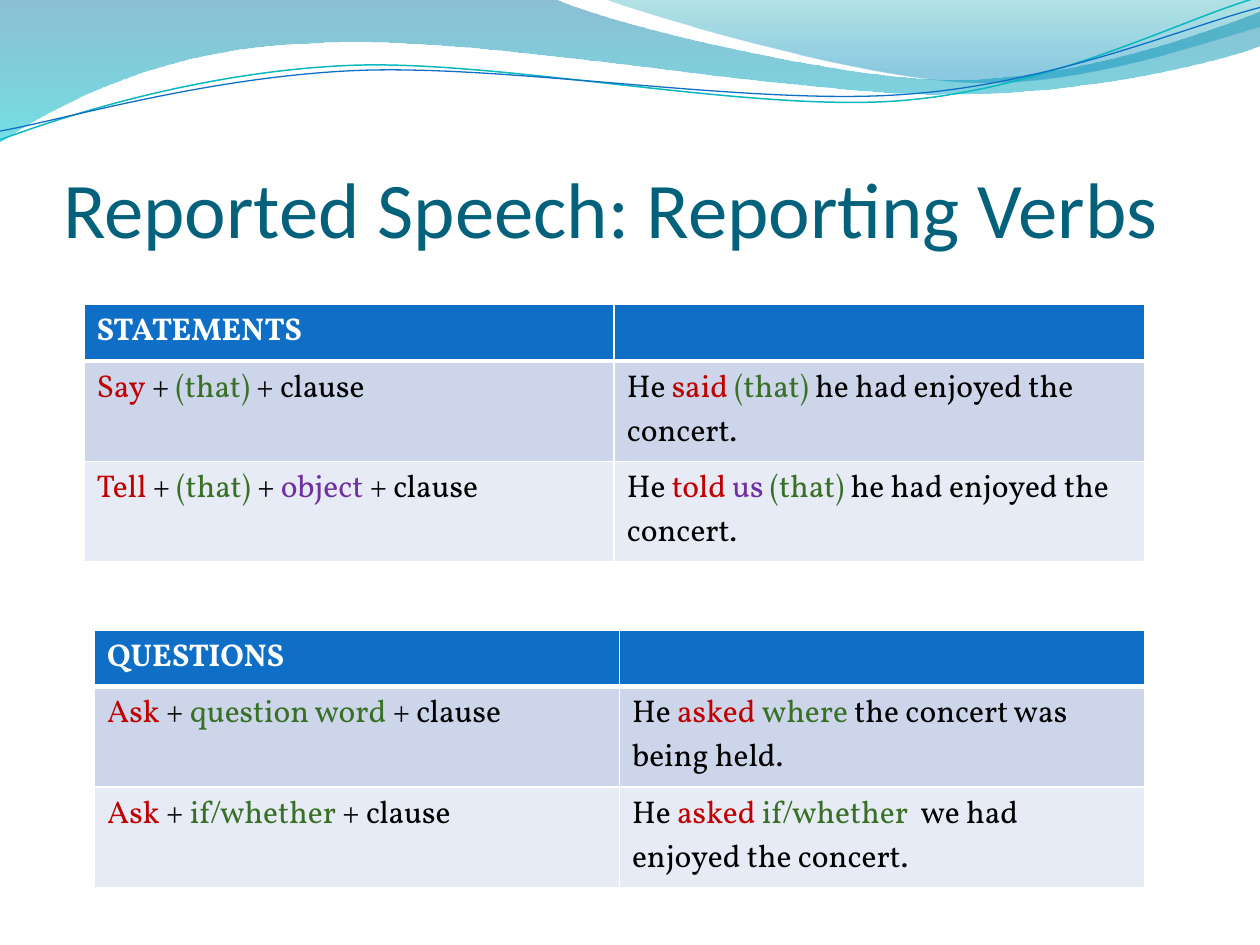
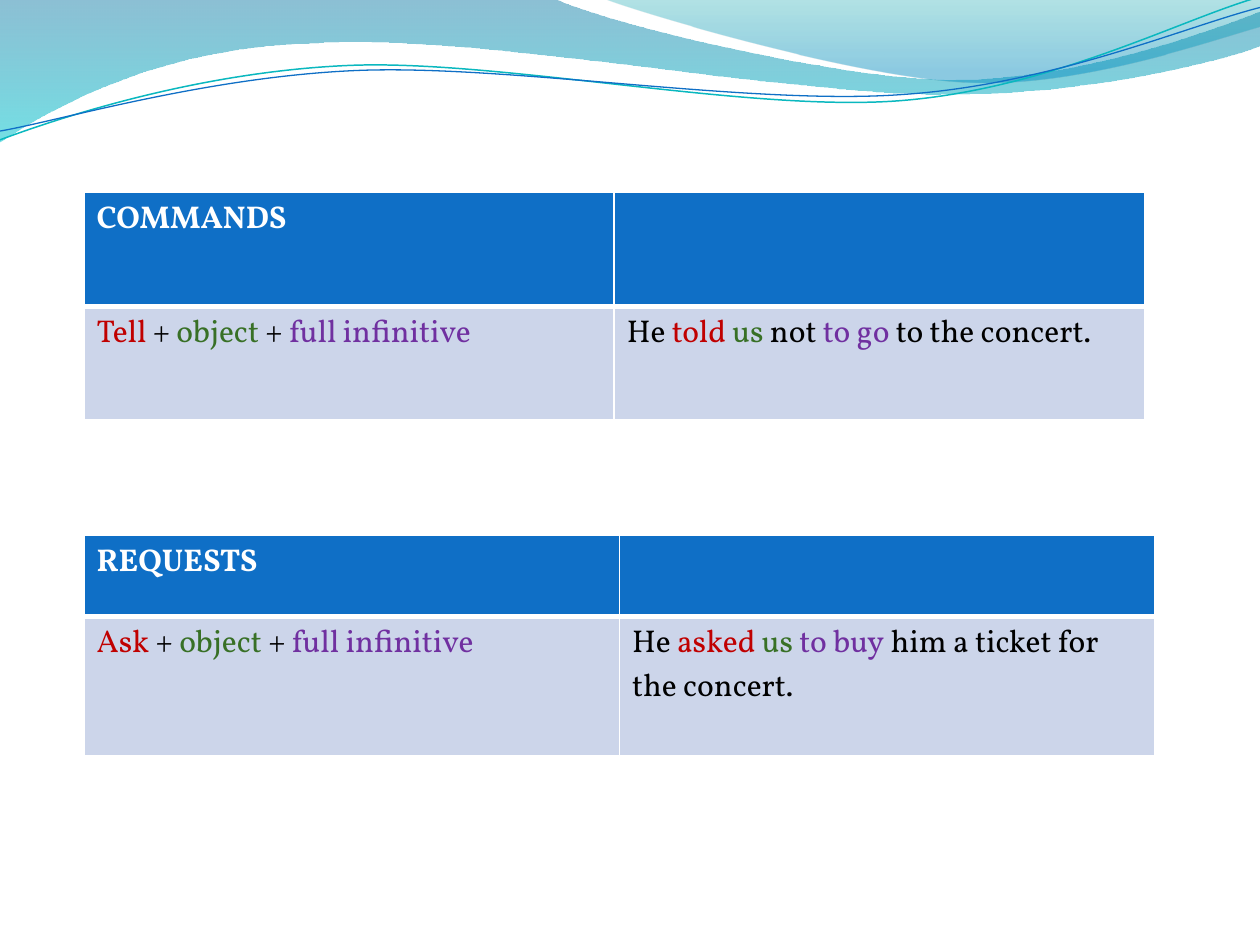
from dataclasses import dataclass
from math import cos, radians, sin

from pptx import Presentation
from pptx.dml.color import RGBColor as RGB
from pptx.enum.text import MSO_ANCHOR as Anchor, MSO_AUTO_SIZE as AutoSize, PP_ALIGN as Align
from pptx.oxml.ns import qn
from pptx.util import Pt
from lxml.etree import SubElement


@dataclass(frozen=True)
class Theme:
    title_font: str = "Calibri"
    body_font: str = "Vollkorn"
    title_size: float = 45
    body_size: float = 18
    title: str = "04617B"
    header: str = "0F6FC6"
    bands: tuple = ("CCD5EA", "E7EBF5")
    border: str = "FFFFFF"
    heading: str = "FFFFFF"
    plain: str = "000000"
    verb: str = "C00000"
    green: str = "387026"
    purple: str = "7030A0"


THEME = Theme()

# Wave outlines in points: a pair is a line end, three pairs are a Bezier curve
SWEEP = [(0, 0), (316.8, -0.7),
         ((342.7, 12.2), (478.1, 45.4), (545.8, 45.4)),
         ((614.2, 45.4), (689.8, 18.7), (720, 6.5)),
         (720.7, 25.9),
         ((707.8, 31.7), (626.4, 54.7), (537.1, 54)),
         ((447.8, 54), (275, 20.2), (185, 24.5)),
         ((92.9, 25.9), (33.1, 59.8), (-0.7, 81.4))]
VEIL = [(344.9, -0.7),
        ((366.5, 7.9), (491, 44.6), (553.7, 46.8)),
        ((616.3, 49.7), (691.9, 23), (720, 15.1)),
        (720, 0)]
TEAL_STRAND = [(0, 79.9),
               ((34.6, 67), (113.8, 41), (199.4, 37.4)),
               ((284.4, 33.8), (427, 64.1), (513.4, 57.6)),
               ((599.8, 51.1), (675.4, 10.8), (718.6, -1.4))]
BLUE_STRAND = [(0, 74.9),
               ((33.8, 69.1), (118.1, 43.9), (203.8, 40.3)),
               ((290.2, 36.7), (429.8, 60.5), (516.2, 54)),
               ((601.9, 48.2), (677.5, 15.1), (720, 4.3))]
STRAND_TILT = -2.7
STRAND_CENTRE = (359.5, 42)

# Gradient stops: position, colour, opacity in percent
WAVES = [(SWEEP, [(0, "0074A1", 45), (1, "00C6CF", 55)]),
         (VEIL, [(0, "00A1A9", 30), (0.8, "008BBF", 45)])]
STRANDS = [(TEAL_STRAND, "0AB8BF", 0.85), (BLUE_STRAND, "0F6FC6", 0.75)]

# Grammar rows: each cell is a list of (colour role, text)
STATEMENTS = [
    ([("verb", "Say"), ("plain", " + "), ("green", "(that) "), ("plain", "+ clause")],
     [("plain", "He "), ("verb", "said "), ("green", "(that) "),
      ("plain", "he had enjoyed the concert.")]),
    ([("verb", "Tell"), ("plain", " + "), ("green", "(that) "), ("plain", "+ "),
      ("purple", "object"), ("plain", " + clause")],
     [("plain", "He "), ("verb", "told "), ("purple", "us "), ("green", "(that) "),
      ("plain", "he had enjoyed the concert.")]),
]
QUESTIONS = [
    ([("verb", "Ask"), ("plain", " + "), ("green", "question word "), ("plain", "+ clause")],
     [("plain", "He "), ("verb", "asked "), ("green", "where "),
      ("plain", "the concert was being held.")]),
    ([("verb", "Ask"), ("plain", " + "), ("green", "if/whether"), ("plain", " + clause")],
     [("plain", "He "), ("verb", "asked "), ("green", "if/whether  "),
      ("plain", "we had enjoyed the concert.")]),
]
COMMANDS = [
    ([("verb", "Tell "), ("plain", "+ "), ("green", "object"), ("plain", " + "),
      ("purple", "full infinitive")],
     [("plain", "He "), ("verb", "told "), ("green", "us"), ("plain", " not "),
      ("purple", "to go "), ("plain", "to the concert.")]),
]
REQUESTS = [
    ([("verb", "Ask"), ("plain", " + "), ("green", "object"), ("plain", " + "),
      ("purple", "full infinitive")],
     [("plain", "He "), ("verb", "asked "), ("green", "us "), ("purple", "to buy"),
      ("plain", " him a ticket for the concert.")]),
]


def apply(target, formats):
    for name, value in formats.items():
        setattr(target, name, value)


def style_font(font, name, size, color, bold=False):
    apply(font, {"name": name, "size": Pt(size), "bold": bold})
    font.color.rgb = RGB.from_string(color)


# Wave backdrop
def turn(point, degrees, centre):
    (x, y), (cx, cy), angle = point, centre, radians(degrees)
    dx, dy = x - cx, y - cy
    return cx + dx * cos(angle) - dy * sin(angle), cy + dx * sin(angle) + dy * cos(angle)


def draw_outline(slide, outline, close, tilt=0, centre=(0, 0)):
    parts = [part if isinstance(part[0], tuple) else (part,) for part in outline]
    points = [turn(point, -tilt, centre) for part in parts for point in part]
    start, *rest = [(Pt(x), Pt(y)) for x, y in points]
    builder = slide.shapes.build_freeform(*start)
    builder.add_line_segments(rest, close=close)
    shape = builder.convert_to_shape()
    shape.shadow.inherit = False
    shape.rotation = tilt
    # Join each run of three segments that belongs to a curve
    segments = iter(list(shape.element.iter(qn("a:lnTo"))))
    for part in parts[1:]:
        first, *others = [next(segments) for _ in part]
        if others:
            first.tag = qn("a:cubicBezTo")
        for segment in others:
            first.append(segment[0])
            segment.getparent().remove(segment)
    return shape


def draw_wave(slide, outline, stops):
    wave = draw_outline(slide, outline, True)
    wave.line.fill.background()
    wave.fill.gradient()
    wave.fill.gradient_angle = 270
    for stop, (position, color, _) in zip(wave.fill.gradient_stops, stops):
        stop.position = position
        stop.color.rgb = RGB.from_string(color)
    for node, (_, _, opacity) in zip(wave.element.iter(qn("a:srgbClr")), stops):
        SubElement(node, qn("a:alpha"), val=str(opacity * 1000))
    return wave


def draw_strand(slide, outline, color, weight):
    strand = draw_outline(slide, outline, False, STRAND_TILT, STRAND_CENTRE)
    strand.fill.background()
    strand.line.color.rgb = RGB.from_string(color)
    strand.line.width = Pt(weight)
    return strand


def add_backdrop(prs, slide):
    """Draw the waves once and move them to the master, behind its placeholders."""
    parts = [draw_wave(slide, *wave) for wave in WAVES]
    parts += [draw_strand(slide, *strand) for strand in STRANDS]
    master_tree = prs.slide_master.shapes.element
    for index, part in enumerate(parts, start=2):
        master_tree.insert(index, part.element)


# Title
def add_title(slide, text, box):
    title = slide.shapes.title
    apply(title, dict(zip(("left", "top", "width", "height"), map(Pt, box))))
    frame = title.text_frame
    apply(frame, {"text": text, "auto_size": AutoSize.NONE, "word_wrap": True,
                  "vertical_anchor": Anchor.BOTTOM, "margin_left": 0,
                  "margin_right": 0, "margin_top": Pt(3.6), "margin_bottom": 0})
    frame.paragraphs[0].alignment = Align.LEFT
    style_font(frame.paragraphs[0].runs[0].font, THEME.title_font, THEME.title_size, THEME.title)


# Grammar tables
def format_cell(cell, runs, fill, borders, bold=False):
    tc_pr = cell._tc.get_or_add_tcPr()
    for side, weight in borders.items():
        edge = SubElement(tc_pr, qn(f"a:ln{side}"), w=str(Pt(weight)))
        solid = SubElement(edge, qn("a:solidFill"))
        SubElement(solid, qn("a:srgbClr"), val=THEME.border)
    cell.fill.solid()
    cell.fill.fore_color.rgb = RGB.from_string(fill)
    paragraph = cell.text_frame.paragraphs[0]
    for role, text in runs:
        run = paragraph.add_run()
        run.text = text
        style_font(run.font, THEME.body_font, THEME.body_size, getattr(THEME, role), bold)


def add_grammar_table(slide, heading, rows, box, heights):
    left, top, width = box
    frame = slide.shapes.add_table(len(rows) + 1, 2, Pt(left), Pt(top), Pt(width),
                                   Pt(sum(heights)))
    table = frame.table
    for row, height in zip(table.rows, heights):
        row.height = Pt(height)
    for column, runs in enumerate(([("heading", heading)], [])):
        format_cell(table.cell(0, column), runs, THEME.header,
                    {"L": 1, "R": 1, "T": 1, "B": 3}, bold=True)
    for index, cells in enumerate(rows):
        for column, runs in enumerate(cells):
            format_cell(table.cell(index + 1, column), runs,
                        THEME.bands[index % 2], {"L": 1, "R": 1, "B": 1})


# Slides
def add_verbs_slide(prs):
    slide = prs.slides.add_slide(prs.slide_layouts[5])
    add_title(slide, "Reported Speech: Reporting Verbs", (36, 55.5, 648, 90))
    add_grammar_table(slide, "STATEMENTS", STATEMENTS, (48, 174, 606), [29.5] * 3)
    add_grammar_table(slide, "QUESTIONS", QUESTIONS, (54, 360, 600), [29.5] * 3)
    return slide


def add_orders_slide(prs):
    slide = prs.slides.add_slide(prs.slide_layouts[6])
    add_grammar_table(slide, "REQUESTS", REQUESTS, (48, 306, 612), [46.2, 79.8])
    add_grammar_table(slide, "COMMANDS", COMMANDS, (48, 110, 606), [65, 65])


def main():
    prs = Presentation()
    apply(prs, {"slide_width": Pt(720), "slide_height": Pt(540)})
    verbs_slide = add_verbs_slide(prs)
    add_backdrop(prs, verbs_slide)
    add_orders_slide(prs)
    prs.save("out.pptx")


if __name__ == "__main__":
    main()
